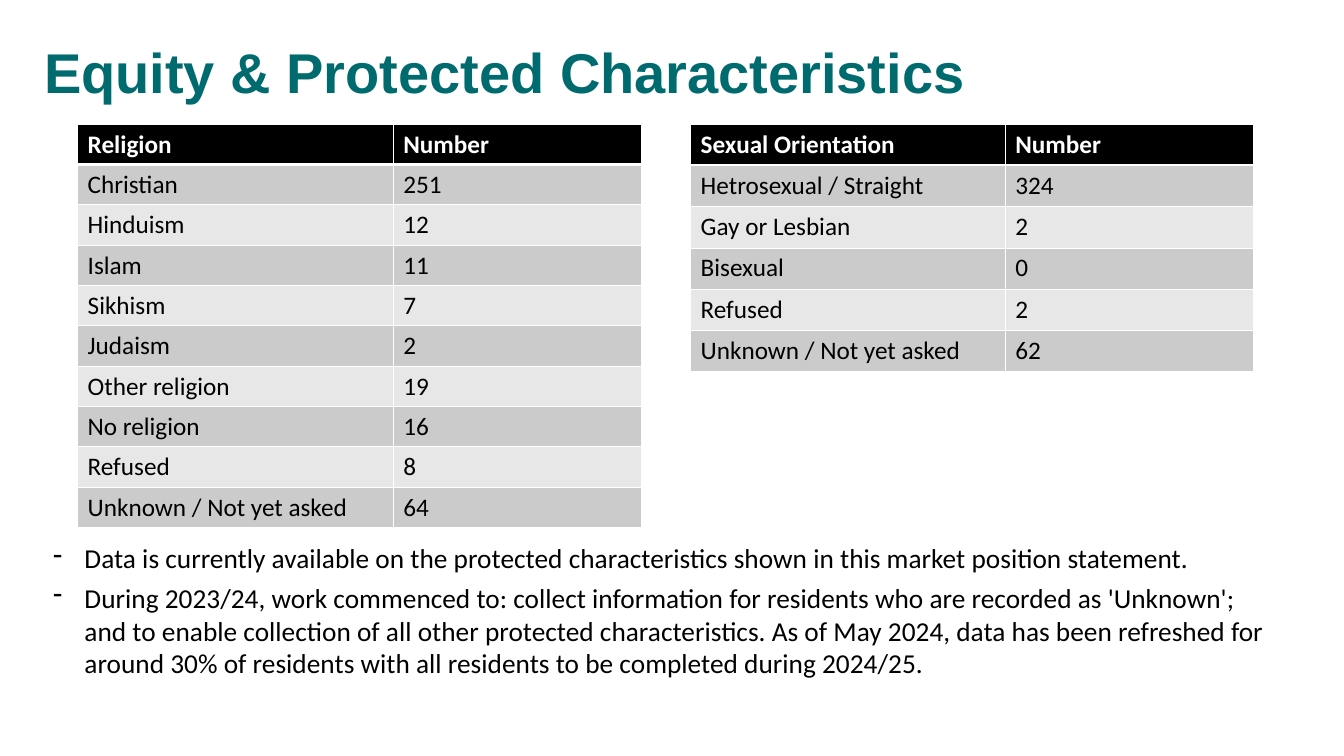
from dataclasses import dataclass

from lxml import etree
from pptx import Presentation
from pptx.dml.color import RGBColor as RGB
from pptx.enum.text import MSO_ANCHOR as Anchor
from pptx.oxml.ns import qn
from pptx.util import Inches, Pt


@dataclass(frozen=True)
class Theme:
    title_font: str = "Arial"
    body_font: str = "Calibri"
    title_size: float = 40
    body_size: float = 19.5
    table_size: float = 18
    teal: str = "006B6F"
    black: str = "000000"
    white: str = "FFFFFF"
    bands: tuple = ("CBCBCB", "E7E7E7")
    thin: float = 0.65
    thick: float = 1.94


RELIGION = [
    ("Religion", "Number"),
    ("Christian", "251"),
    ("Hinduism", "12"),
    ("Islam", "11"),
    ("Sikhism", "7"),
    ("Judaism", "2"),
    ("Other religion", "19"),
    ("No religion", "16"),
    ("Refused", "8"),
    ("Unknown / Not yet asked", "64"),
]
ORIENTATION = [
    ("Sexual Orientation", "Number"),
    ("Hetrosexual / Straight", "324"),
    ("Gay or Lesbian", "2"),
    ("Bisexual", "0"),
    ("Refused", "2"),
    ("Unknown / Not yet asked", "62"),
]
NOTES = [
    "Data is currently available on the protected characteristics shown in this "
    "market position statement.",
    "During 2023/24, work commenced to: collect information for residents who are "
    "recorded as 'Unknown'; and to enable collection of all other protected "
    "characteristics. As of May 2024, data has been refreshed for around 30% of "
    "residents with all residents to be completed during 2024/25.",
]


def write(p, text, *, font, size, color, bold=False):
    r = p.add_run()
    r.text = text
    r.font.name = font
    r.font.size = Pt(size)
    r.font.bold = bold
    r.font.color.rgb = RGB.from_string(color)


def add_dash(p, indent):
    """Give the paragraph a hanging dash bullet."""
    pPr = p._p.get_or_add_pPr()
    pPr.set("marL", str(Inches(indent)))
    pPr.set("indent", str(-Inches(indent)))
    etree.SubElement(pPr, qn("a:buChar")).set("char", "-")


def add_border(cell, side, color, width):
    """Draw one side of a cell; call in the order L, R, T, B, before the fill."""
    ln = etree.SubElement(cell._tc.get_or_add_tcPr(), qn(f"a:ln{side}"), w=str(Pt(width)))
    fill = etree.SubElement(ln, qn("a:solidFill"))
    etree.SubElement(fill, qn("a:srgbClr")).set("val", color)


class SlideBuilder:
    def __init__(self, slide, theme):
        self.slide = slide
        self.theme = theme

    def text_frame(self, x, y, w, h, anchor=Anchor.TOP):
        box = self.slide.shapes.add_textbox(Inches(x), Inches(y), Inches(w), Inches(h))
        tf = box.text_frame
        tf.word_wrap = True
        tf.vertical_anchor = anchor
        return tf

    def title(self, text, x, y, w, h):
        t = self.theme
        p = self.text_frame(x, y, w, h, Anchor.BOTTOM).paragraphs[0]
        p.line_spacing = 0.9
        write(p, text, font=t.title_font, size=t.title_size, color=t.teal, bold=True)

    def bullets(self, items, x, y, w, h):
        t = self.theme
        tf = self.text_frame(x, y, w, h)
        for i, item in enumerate(items):
            p = tf.add_paragraph() if i else tf.paragraphs[0]
            add_dash(p, 0.31)
            p.space_after = Pt(5)
            write(p, item, font=t.body_font, size=t.body_size, color=t.black)

    def table(self, rows, x, y, col_widths, row_height):
        frame = self.slide.shapes.add_table(
            len(rows), len(col_widths), Inches(x), Inches(y),
            Inches(sum(col_widths)), Inches(row_height * len(rows)))
        table = frame.table
        for col, width in zip(table.columns, col_widths):
            col.width = Inches(width)
        for i, values in enumerate(rows):
            table.rows[i].height = Inches(row_height)
            for j, value in enumerate(values):
                self.cell(table.cell(i, j), value, i)

    def cell(self, cell, text, row):
        t = self.theme
        header = row == 0
        widths = {"L": t.thin, "R": t.thin,
                  "T": t.thick if row == 1 else t.thin,
                  "B": t.thick if header else t.thin}
        for side, width in widths.items():
            add_border(cell, side, t.white, width)
        cell.fill.solid()
        cell.fill.fore_color.rgb = RGB.from_string(
            t.black if header else t.bands[(row - 1) % 2])
        write(cell.text_frame.paragraphs[0], text, font=t.body_font, size=t.table_size,
              color=t.white if header else t.black, bold=header)


def main():
    prs = Presentation()
    prs.slide_width, prs.slide_height = Inches(13.33), Inches(7.5)
    s = SlideBuilder(prs.slides.add_slide(prs.slide_layouts[6]), Theme())
    s.title("Equity & Protected Characteristics", 0.34, 0, 10.34, 1.1)
    s.bullets(NOTES, 0.43, 5.32, 12.27, 1.48)
    s.table(RELIGION, 0.77, 1.23, (3.13, 2.46), 0.4)
    s.table(ORIENTATION, 6.85, 1.23, (3.12, 2.46), 0.41)
    prs.save("out.pptx")


if __name__ == "__main__":
    main()
